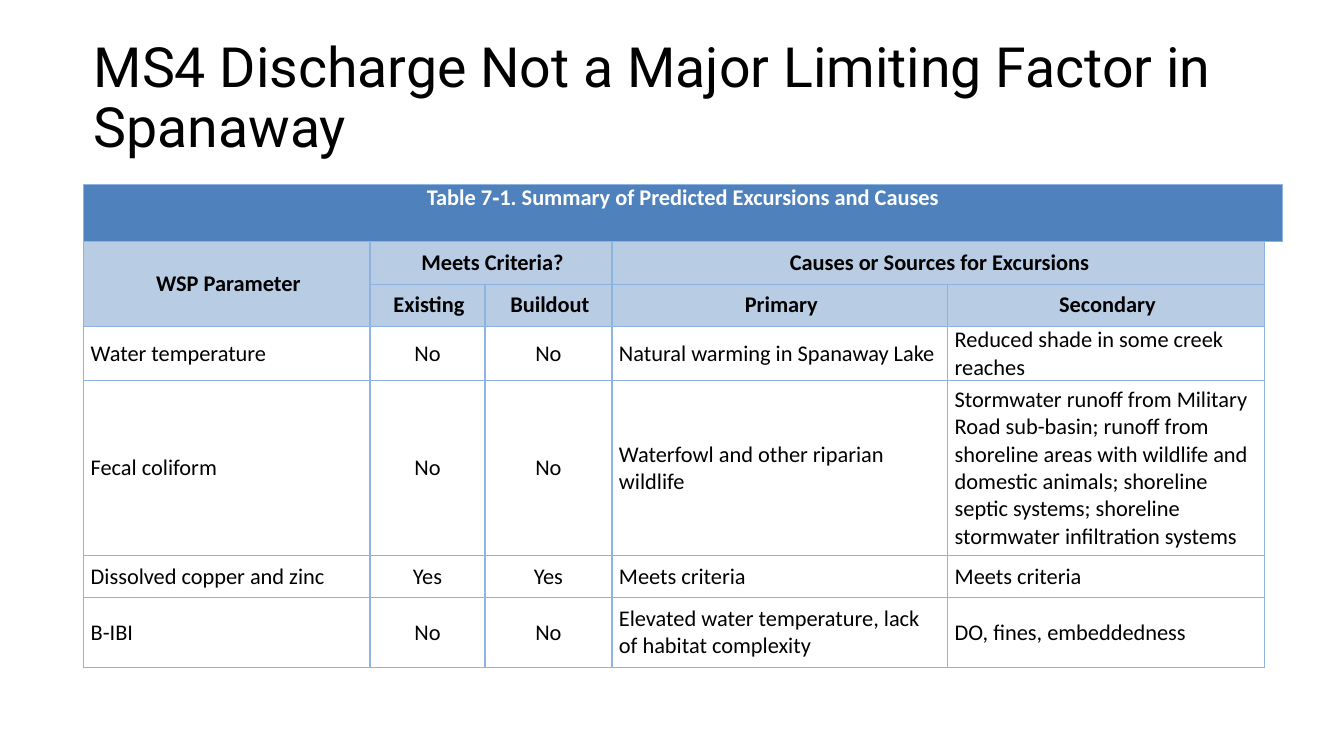
from lxml import etree
from pptx import Presentation
from pptx.dml.color import RGBColor
from pptx.enum import text
from pptx.oxml import ns
from pptx.util import Inches, Pt

TITLE = "MS4 Discharge Not a Major Limiting Factor in Spanaway"
ROWS = [
    ["Table 7‑1. Summary of Predicted Excursions and Causes", "", "", "", ""],
    ["WSP Parameter", "Meets Criteria?", "", "Causes or Sources for Excursions", ""],
    ["", "Existing", "Buildout", "Primary", "Secondary"],
    ["Water temperature", "No", "No", "Natural warming in Spanaway Lake",
     "Reduced shade in some creek reaches"],
    ["Fecal coliform", "No", "No", "Waterfowl and other riparian wildlife",
     "Stormwater runoff from Military Road sub-basin; runoff from shoreline areas "
     "with wildlife and domestic animals; shoreline septic systems; "
     "shoreline stormwater infiltration systems"],
    ["Dissolved copper and zinc", "Yes", "Yes", "Meets criteria", "Meets criteria"],
    ["B-IBI", "No", "No", "Elevated water temperature, lack of habitat complexity",
     "DO, fines, embeddedness"],
]
COLUMN_WIDTHS = [2.84, 1.14, 1.26, 3.33, 3.14, 0.15]
ROW_HEIGHTS = [0.57, 0.42, 0.42, 0.54, 1.73, 0.42, 0.69]
MERGES = [((0, 0), (0, 5)), ((1, 0), (2, 0)), ((1, 1), (1, 2)), ((1, 3), (1, 4))]
HEADER_ROWS = 3
SPACER_COLUMN = 5
COLORS = {"banner": "4F81BD", "header": "B8CCE4", "border": "8DB3E2",
          "text": "000000", "banner_text": "FFFFFF"}


def rgb(name):
    return RGBColor.from_string(COLORS[name])


def style_text(paragraph, font_name, size, color, bold=False):
    for run in paragraph.runs:
        run.font.name = font_name
        run.font.size = Pt(size)
        run.font.bold = bold
        run.font.color.rgb = rgb(color)


def add_title(slide):
    box = slide.shapes.add_textbox(Inches(0.83), Inches(0.37), Inches(11.55), Inches(1.24))
    frame = box.text_frame
    frame.word_wrap = True
    frame.vertical_anchor = text.MSO_ANCHOR.MIDDLE
    frame.text = TITLE
    paragraph = frame.paragraphs[0]
    paragraph.line_spacing = 0.9
    style_text(paragraph, "Roboto", 39.6, "text")


def set_borders(cell, visible_sides):
    properties = cell._tc.get_or_add_tcPr()
    for side in "LRTB":
        line = etree.SubElement(properties, ns.qn(f"a:ln{side}"), w=str(Pt(1)))
        if side in visible_sides:
            fill = etree.SubElement(line, ns.qn("a:solidFill"))
            etree.SubElement(fill, ns.qn("a:srgbClr"), val=COLORS["border"])
        else:
            etree.SubElement(line, ns.qn("a:noFill"))


def style_cell(cell, row, column):
    spacer = column == SPACER_COLUMN and row > 0
    if spacer:
        set_borders(cell, "LT" if row == 1 else "L")
    else:
        set_borders(cell, "LRTB")
    if spacer or row >= HEADER_ROWS:
        cell.fill.background()
    else:
        cell.fill.solid()
        cell.fill.fore_color.rgb = rgb("header" if row else "banner")

    cell.margin_left = cell.margin_right = Inches(0.07)
    cell.margin_top = cell.margin_bottom = 0
    cell.vertical_anchor = text.MSO_ANCHOR.MIDDLE if row else text.MSO_ANCHOR.TOP
    paragraph = cell.text_frame.paragraphs[0]
    centered = row < HEADER_ROWS or column in (1, 2)
    paragraph.alignment = text.PP_ALIGN.CENTER if centered else text.PP_ALIGN.LEFT
    if 0 < row < HEADER_ROWS:
        paragraph._p.get_or_add_pPr().set("marL", str(Inches(0.03)))
    style_text(paragraph, "Calibri", 16, "text" if row else "banner_text", row < HEADER_ROWS)


def add_summary_table(slide):
    frame = slide.shapes.add_table(
        len(ROW_HEIGHTS), len(COLUMN_WIDTHS), Inches(0.83), Inches(1.83),
        Inches(sum(COLUMN_WIDTHS)), Inches(sum(ROW_HEIGHTS)))
    table = frame.table
    table.first_row = table.horz_banding = False
    for column, width in zip(table.columns, COLUMN_WIDTHS):
        column.width = Inches(width)
    for row, height in zip(table.rows, ROW_HEIGHTS):
        row.height = Inches(height)
    for r, values in enumerate(ROWS):
        for c, value in enumerate(values + [""]):
            cell = table.cell(r, c)
            if value:
                cell.text_frame.text = value
            style_cell(cell, r, c)
    for first, last in MERGES:
        table.cell(*first).merge(table.cell(*last))


def main():
    presentation = Presentation()
    presentation.slide_width = Inches(13.33)
    presentation.slide_height = Inches(7.5)
    slide = presentation.slides.add_slide(presentation.slide_layouts[6])
    add_title(slide)
    add_summary_table(slide)
    presentation.save("out.pptx")


if __name__ == "__main__":
    main()
